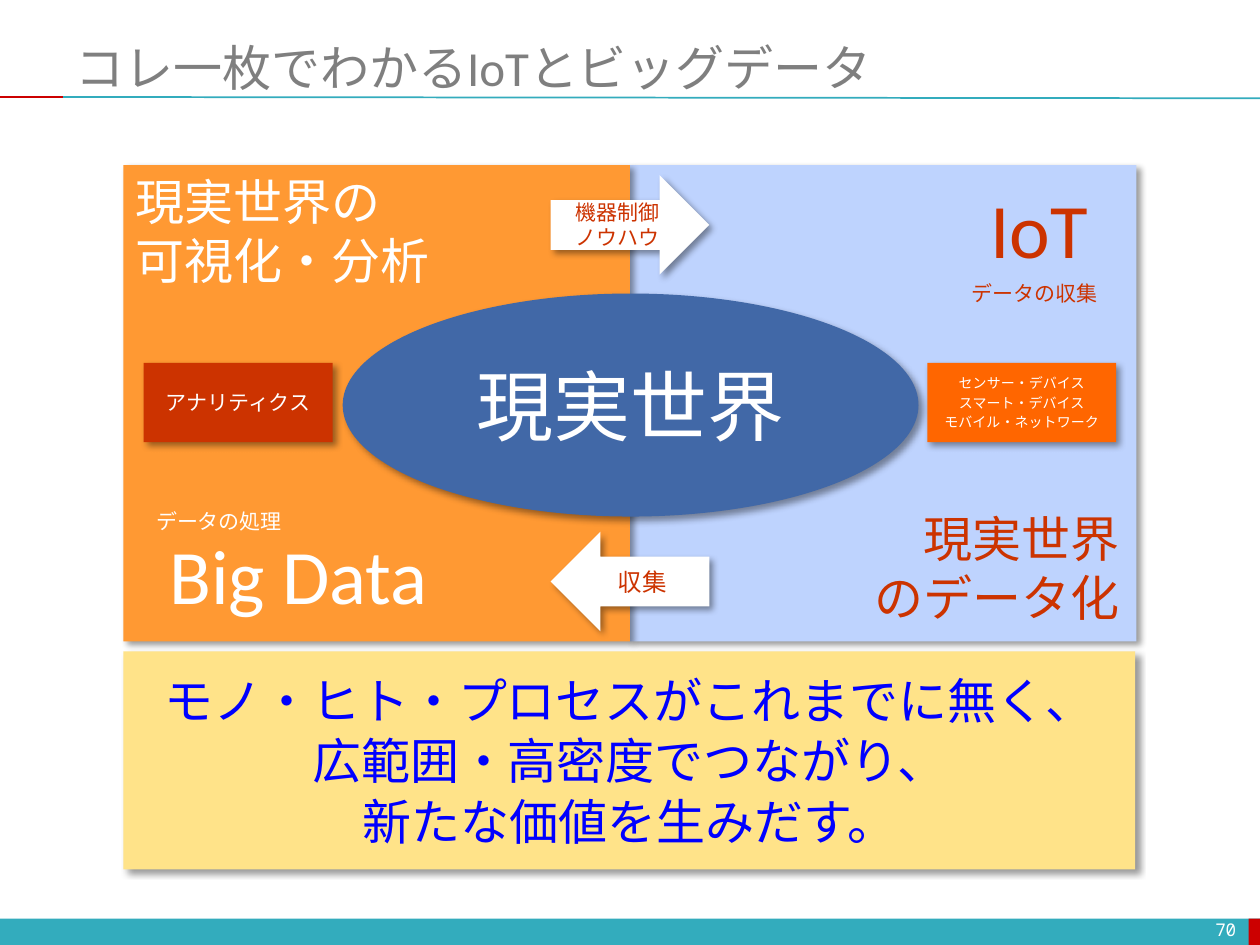
from lxml import etree
from pptx import Presentation
from pptx.dml.color import RGBColor
from pptx.enum.shapes import MSO_CONNECTOR, MSO_SHAPE
from pptx.enum.text import MSO_ANCHOR, MSO_AUTO_SIZE, PP_ALIGN
from pptx.oxml import parse_xml
from pptx.oxml.ns import nsdecls, qn
from pptx.util import Inches, Pt

RECT, OVAL = MSO_SHAPE.RECTANGLE, MSO_SHAPE.OVAL
LEFT_ARROW, RIGHT_ARROW = MSO_SHAPE.LEFT_ARROW, MSO_SHAPE.RIGHT_ARROW
STRAIGHT = MSO_CONNECTOR.STRAIGHT
TOP, MIDDLE = MSO_ANCHOR.TOP, MSO_ANCHOR.MIDDLE
LEFT, CENTER, RIGHT = PP_ALIGN.LEFT, PP_ALIGN.CENTER, PP_ALIGN.RIGHT
NO_FIT = MSO_AUTO_SIZE.NONE

WHITE = RGBColor(0xFF, 0xFF, 0xFF)
GRAY = RGBColor(0x7F, 0x7F, 0x7F)
TEAL = RGBColor(0x33, 0xAC, 0xBD)
RED = RGBColor(0xCC, 0x00, 0x00)
RUST = RGBColor(0xCC, 0x33, 0x00)
ORANGE = RGBColor(0xFF, 0x99, 0x33)
DEEP = RGBColor(0xFF, 0x66, 0x00)
PALE = RGBColor(0xBE, 0xD3, 0xFE)
BLUE = RGBColor(0x41, 0x68, 0xA7)
YELLOW = RGBColor(0xFF, 0xE3, 0x89)
INK = RGBColor(0x00, 0x00, 0xFF)

LATIN, GOTHIC, MONO = "Calibri", "Noto Sans CJK JP", "Noto Sans Mono"
SHADOW = (
    f'<a:effectLst {nsdecls("a")}><a:outerShdw blurRad="50800" dist="38100" '
    'dir="2700000" algn="tl" rotWithShape="0"><a:srgbClr val="000000">'
    '<a:alpha val="40000"/></a:srgbClr></a:outerShdw></a:effectLst>'
)


def write(shape, lines, size, color, font=LATIN, align=CENTER, anchor=MIDDLE, gap=0):
    frame = shape.text_frame
    frame.text = "\n".join(lines)
    frame.vertical_anchor = anchor
    for i, para in enumerate(frame.paragraphs):
        para.alignment = align
        para.space_before = Pt(gap if i else 0)
        para.font.size = Pt(size)
        para.font.name = font
        para.font.color.rgb = color


def draw(kind, box, fill, shade=True):
    shape = slide.shapes.add_shape(kind, *map(Inches, box))
    shape.shadow.inherit = False
    shape.fill.solid()
    shape.fill.fore_color.rgb = fill
    shape.line.fill.background()
    if shade:
        props = shape._element.spPr
        props.replace(props.find(qn("a:effectLst")), parse_xml(SHADOW))
    return shape


deck = Presentation()
deck.slide_width, deck.slide_height = Inches(10), Inches(7.5)
slide = deck.slides.add_slide(deck.slide_layouts[5])

draw(RECT, (0, 7.29, 10, 0.22), TEAL, False)
draw(RECT, (9.91, 7.29, 0.1, 0.22), RED, False)
for start, end, drop, color in ((0.5, 10, 0.78, TEAL), (0, 0.5, 0.77, RED)):
    rule = slide.shapes.add_connector(
        STRAIGHT, Inches(start), Inches(0.77), Inches(end), Inches(drop)
    )
    rule.line.color.rgb = color
    rule.line.width = Pt(1)
    etree.SubElement(rule._element.spPr, qn("a:effectLst"))

title = slide.shapes.title
title.left, title.top = Inches(0.5), Inches(0.3)
title.width, title.height = Inches(9.5), Inches(0.46)
write(title, ["コレ一枚でわかるIoTとビッグデータ"], 28, GRAY, align=LEFT)
title.text_frame.auto_size = NO_FIT

draw(RECT, (5, 1.31, 4.02, 3.78), PALE)
draw(RECT, (0.98, 1.31, 4.02, 3.78), ORANGE)

blocks = (
    (OVAL, (2.72, 2.33, 4.57, 1.77), BLUE, ["現実世界"], 44, WHITE, LATIN, 0),
    (LEFT_ARROW, (4.37, 4.22, 1.26, 0.79), WHITE, ["収集"], 14, RUST, LATIN, 0),
    (RIGHT_ARROW, (4.37, 1.39, 1.26, 0.79), WHITE,
     ["機器制御", "ノウハウ"], 12, RUST, LATIN, 0),
    (RECT, (0.98, 5.17, 8.03, 1.73), YELLOW,
     ["モノ・ヒト・プロセスがこれまでに無く、", "広範囲・高密度でつながり、", "新たな価値を生みだす。"],
     28, INK, GOTHIC, 0.7),
    (RECT, (1.14, 2.88, 1.5, 0.63), RUST, ["アナリティクス"], 12, WHITE, GOTHIC, 0),
    (RECT, (7.36, 2.88, 1.5, 0.63), DEEP,
     ["センサー・デバイス", "スマート・デバイス", "モバイル・ネットワーク"], 8, WHITE, GOTHIC, 1.6),
)
for kind, box, fill, lines, size, color, font, gap in blocks:
    write(draw(kind, box, fill), lines, size, color, font, gap=gap)

labels = (
    ((7.76, 1.39, 1.09, 0.84), ["IoT"], 44, RUST, LEFT),
    ((0.98, 4.14, 2.78, 0.84), ["Big Data"], 44, WHITE, CENTER),
    ((6.81, 3.99, 2.17, 1.04), ["現実世界", "のデータ化"], 28, RUST, RIGHT),
    ((0.98, 1.31, 2.56, 1.04), ["現実世界の", "可視化・分析"], 28, WHITE, LEFT),
    ((7.6, 2.18, 1.21, 0.3), ["データの収集"], 12, RUST, RIGHT),
    ((1.14, 3.99, 1.21, 0.3), ["データの処理"], 12, WHITE, LEFT),
)
for box, lines, size, color, align in labels:
    label = slide.shapes.add_textbox(*map(Inches, box))
    label.text_frame.word_wrap = False
    write(label, lines, size, color, align=align, anchor=TOP)

number = slide.shapes.add_textbox(Inches(7.58), Inches(7.26), Inches(2.33), Inches(0.24))
number.text_frame.word_wrap = True
write(number, ["70"], 10, WHITE, MONO, RIGHT)

deck.save("out.pptx")
